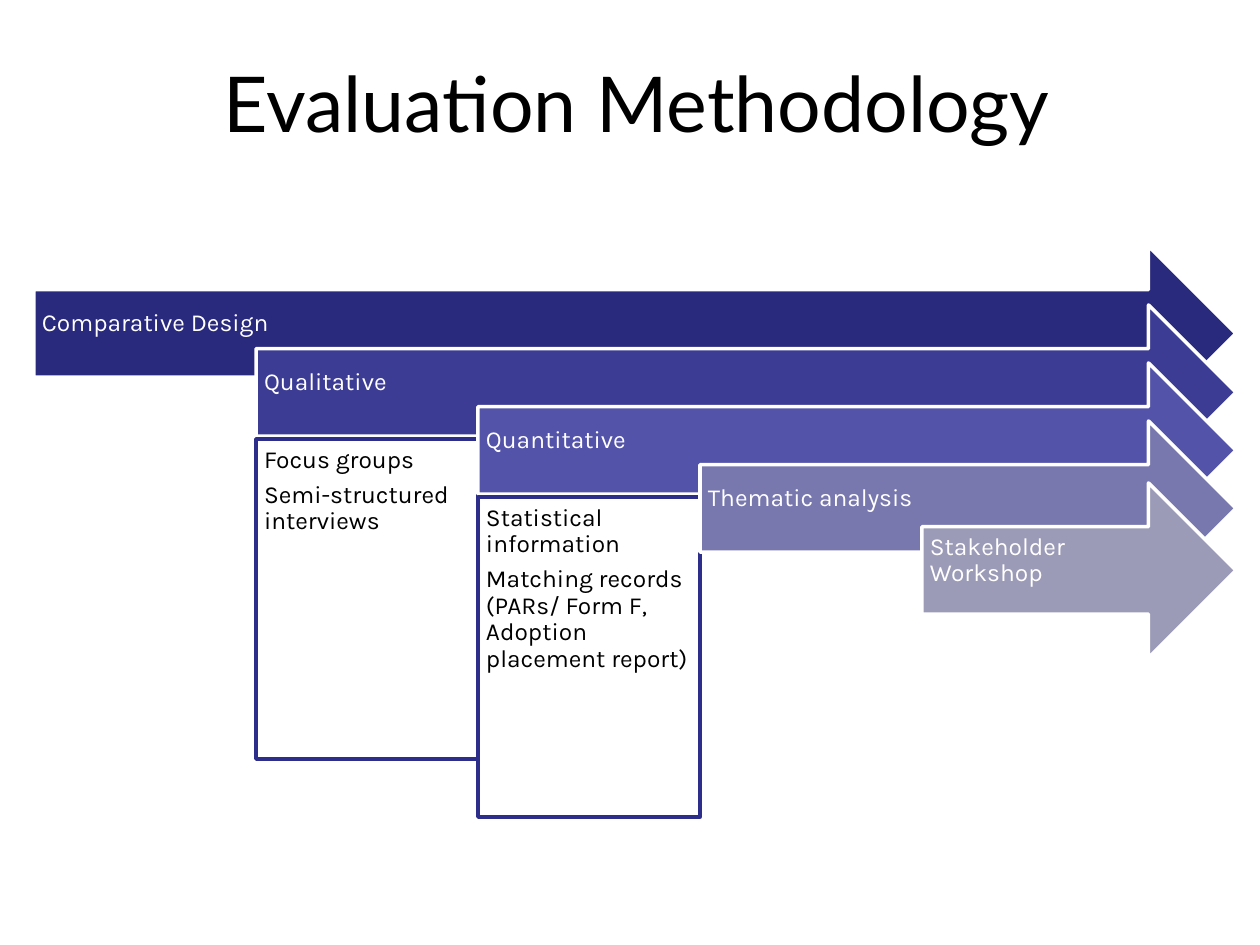
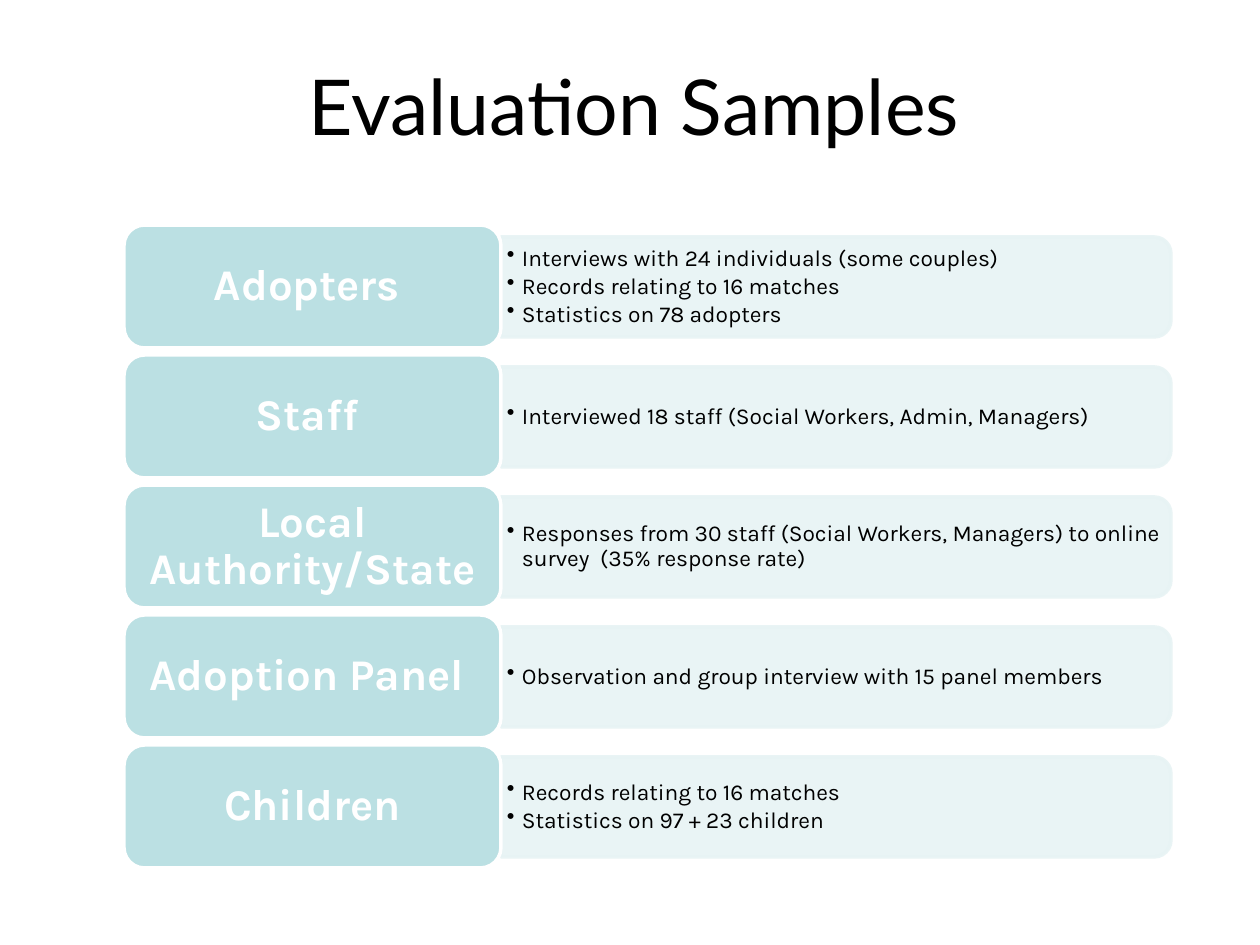
from lxml.etree import SubElement
from pptx import Presentation
from pptx.dml.color import RGBColor
from pptx.enum.shapes import MSO_SHAPE
from pptx.enum.text import MSO_ANCHOR, PP_ALIGN
from pptx.oxml.ns import qn
from pptx.util import Pt

PX = 7257
WHITE, BLACK, NAVY = "FFFFFF", "000000", "2D2D8A"
TEAL, PALE = "BBE0E3", "E7F3F4"
HEAD, BODY = "Lato", "Karla"

STAGES = [
    ("Comparative Design", "29297D", 246, []),
    ("Qualitative", "3C3C95", 305, ["Focus groups", "Semi-structured interviews"]),
    ("Quantitative", "5353A9", 363, [
        "Statistical information",
        "Matching records (PARs/ Form F, Adoption placement report)",
    ]),
    ("Thematic analysis", "7878AF", 421, []),
    ("Stakeholder Workshop", "9B9BB8", 483, []),
]
GROUPS = [
    ("Adopters ", [
        "Interviews with 24 individuals (some couples)",
        "Records relating to 16 matches",
        "Statistics on 78 adopters",
    ]),
    ("Staff ", ["Interviewed 18 staff (Social Workers, Admin, Managers)"]),
    ("Local Authority/State", [
        "Responses from 30 staff (Social Workers, Managers) to online survey  (35% response rate)",
    ]),
    ("Adoption Panel ", ["Observation and group interview with 15 panel members"]),
    ("Children", ["Records relating to 16 matches", "Statistics on 97 + 23 children"]),
]


def color(code):
    return RGBColor.from_string(code)


def scale(*sizes):
    return [size * PX for size in sizes]


def write(shape, lines, size=14, ink=BLACK, font=BODY, bold=False, align=PP_ALIGN.LEFT,
          anchor=MSO_ANCHOR.MIDDLE, pad=(8, 8, 8, 8), lead=0.9, after=0, dot=False):
    frame = shape.text_frame
    frame.word_wrap = True
    frame.vertical_anchor = anchor
    (frame.margin_left, frame.margin_top,
     frame.margin_right, frame.margin_bottom) = scale(*pad)
    frame.text = "\n".join(lines)
    for para in frame.paragraphs:
        para.alignment = align
        para.line_spacing = lead
        para.space_after = Pt(after)
        if dot:
            props = para._p.get_or_add_pPr()
            props.set("marL", str(15 * PX))
            props.set("indent", str(-15 * PX))
            SubElement(props, qn("a:buChar")).set("char", "•")
        for run in para.runs:
            run.font.name = font
            run.font.size = Pt(size)
            run.font.bold = bold
            run.font.color.rgb = color(ink)


def draw(slide, kind, place, fill, line):
    shape = slide.shapes.add_shape(kind, *scale(*place))
    shape.shadow.inherit = False
    shape.fill.solid()
    shape.fill.fore_color.rgb = color(fill)
    shape.line.color.rgb = color(line)
    shape.line.width = Pt(2)
    return shape


def fade(shape, part):
    for node in shape._element.spPr.iter(qn("a:srgbClr")):
        SubElement(node, qn("a:alpha")).set("val", str(part * 1000))


def start(deck, text, place):
    slide = deck.slides.add_slide(deck.slide_layouts[5])
    title = slide.shapes.title
    title.left, title.top, title.width, title.height = scale(*place)
    write(title, [text], size=44, font=HEAD, align=PP_ALIGN.CENTER,
          pad=(13, 6, 13, 6), lead=1.0)
    return slide


def method(deck):
    slide = start(deck, "Evaluation Methodology", (37, 38, 1200, 127))
    left, step, right = 34, 222, 1236
    for i, (name, fill, top, notes) in enumerate(STAGES):
        x = left + i * step
        arrow = draw(slide, MSO_SHAPE.RIGHT_ARROW, (x, top, right - x, 175), fill, WHITE)
        write(arrow, [name], ink=WHITE, pad=(8, 8, 35, 28), after=4.9)
        if notes:
            box = draw(slide, MSO_SHAPE.RECTANGLE, (x, top + 134, step, 320), WHITE, NAVY)
            write(box, notes, anchor=MSO_ANCHOR.TOP, after=4.9)


def samples(deck):
    slide = start(deck, "Evaluation Samples", (34, 26, 1200, 158))
    left, top, wide, high, pitch = 124, 225, 377, 123, 130
    long, thick = 670, 100
    x = left + wide
    for i, (name, facts) in enumerate(GROUPS):
        y = top + i * pitch
        mid = y + high // 2 + 1
        bar = draw(slide, MSO_SHAPE.ROUND_2_SAME_RECTANGLE,
                   (x + (long - thick) // 2, mid - long // 2, thick, long), PALE, PALE)
        bar.rotation = 90
        fade(bar, 90)
        note = slide.shapes.add_textbox(*scale(x, mid - 45, 665, 90))
        write(note, facts, size=13, pad=(6, 4, 6, 4), after=1.95, dot=True)
        tag = draw(slide, MSO_SHAPE.ROUNDED_RECTANGLE, (left, y, wide, high), TEAL, WHITE)
        write(tag, [name], size=25, ink=WHITE, bold=True, align=PP_ALIGN.CENTER,
              pad=(12, 6, 12, 6), after=8.75)


def main():
    deck = Presentation()
    deck.slide_width, deck.slide_height = scale(1260, 945)
    method(deck)
    samples(deck)
    deck.save("out.pptx")


if __name__ == "__main__":
    main()
